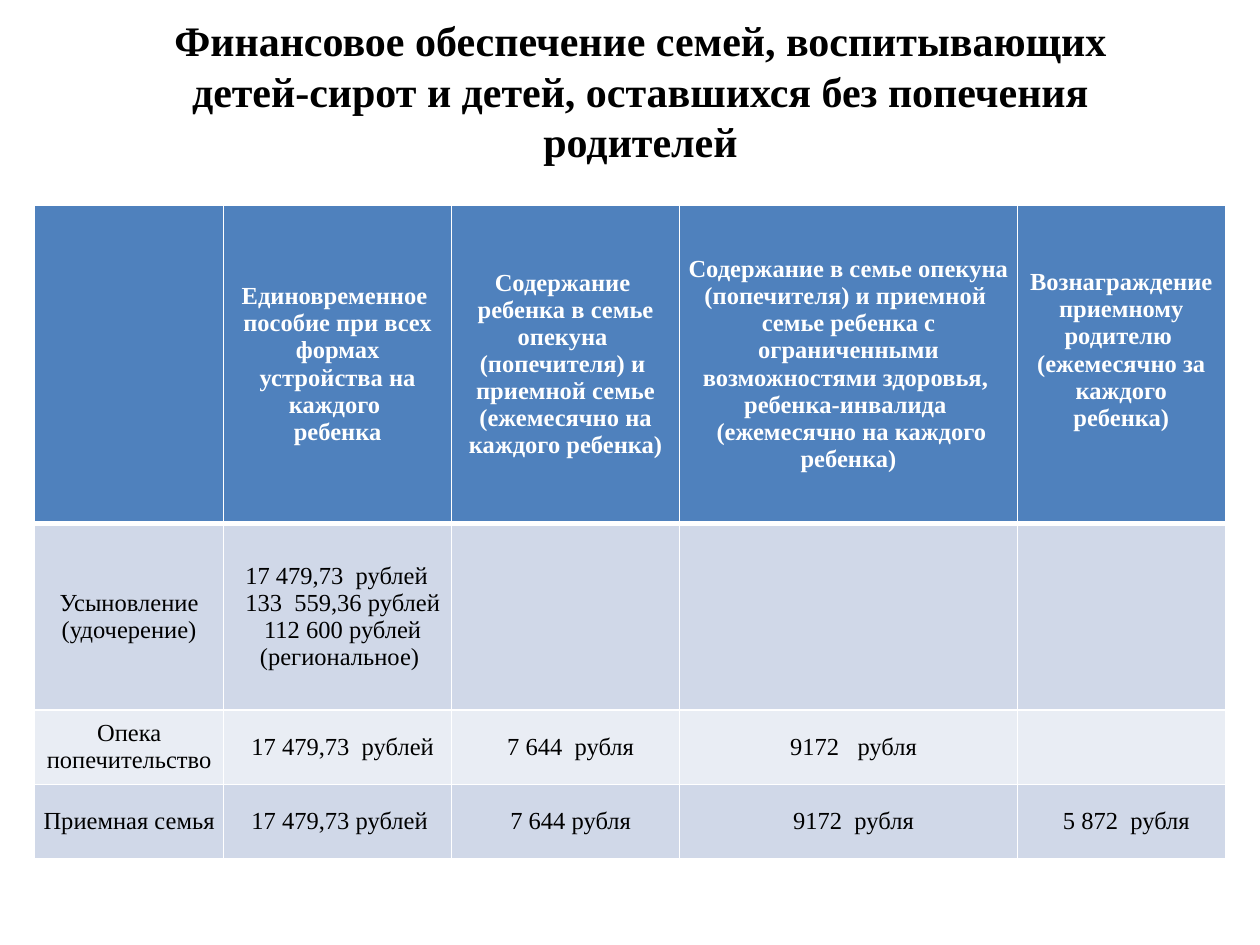
"""Builds a slide with a table of payments to families raising orphaned children."""
from dataclasses import dataclass

from lxml import etree
from pptx import Presentation
from pptx import util as u
from pptx.dml.color import RGBColor
from pptx.enum import text
from pptx.oxml.ns import qn


@dataclass(frozen=True)
class Theme:
    font: str = "Times New Roman"
    title_size: float = 24
    table_size: float = 14
    dark: str = "000000"
    light: str = "FFFFFF"
    header: str = "4F81BD"
    bands: tuple = ("D0D8E8", "E9EDF4")
    thin: float = 1
    thick: float = 3


HEADERS = [
    [],
    ["Единовременное ", "пособие при всех формах устройства на каждого ", "ребенка"],
    ["Содержание ", "ребенка в семье опекуна ", "(попечителя) и ",
     "приемной семье (ежемесячно на каждого ребенка)"],
    ["Содержание в семье опекуна (попечителя) и приемной ",
     "семье ребенка с ограниченными возможностями здоровья, ",
     "ребенка-инвалида ", " (ежемесячно на каждого ребенка)"],
    ["Вознаграждение приемному родителю ", "(ежемесячно за каждого ребенка)"],
]
PAYMENTS = [
    [["Усыновление (удочерение)"],
     ["17 479,73  рублей  ", "133  559,36 рублей", "112 600 рублей (региональное) "],
     [], [], []],
    [["Опека попечительство"], [" 17 479,73  рублей "], ["7 644  рубля"],
     ["9172   рубля"], []],
    [["Приемная семья"], ["17 479,73 рублей "], ["7 644 рубля"],
     ["9172  рубля"], ["5 872  рубля"]],
]
COLUMN_WIDTHS = [108, 130.3, 130.3, 193, 118.8]
ROW_HEIGHTS = [182.2, 106.5, 42.5, 42.5]


def write_text(frame, paragraphs, *, font, size, color, bold=False, indent=0):
    for index, content in enumerate(paragraphs):
        paragraph = frame.paragraphs[0] if index == 0 else frame.add_paragraph()
        paragraph.text = content
        paragraph.alignment = text.PP_ALIGN.CENTER
        if indent:
            properties = paragraph._p.get_or_add_pPr()
            properties.set("marL", str(u.Pt(indent)))
            properties.set("indent", "0")
        for run in paragraph.runs:
            run.font.name = font
            run.font.size = u.Pt(size)
            run.font.bold = bold
            run.font.color.rgb = RGBColor.from_string(color)


class SlideBuilder:
    def __init__(self, slide, theme):
        self.slide = slide
        self.theme = theme

    def title(self, content, left, top, width, height):
        shape = self.slide.shapes.title
        shape.left, shape.top = u.Pt(left), u.Pt(top)
        shape.width, shape.height = u.Pt(width), u.Pt(height)
        shape.text_frame.vertical_anchor = text.MSO_ANCHOR.MIDDLE
        shape.text_frame.auto_size = text.MSO_AUTO_SIZE.NONE
        write_text(shape.text_frame, [content], font=self.theme.font,
                   size=self.theme.title_size, color=self.theme.dark, bold=True)

    def borders(self, cell, widths):
        properties = cell._tc.get_or_add_tcPr()
        for index, (side, width) in enumerate(widths.items()):
            line = etree.Element(qn(f"a:ln{side}"), w=str(u.Pt(width)))
            fill = etree.SubElement(line, qn("a:solidFill"))
            etree.SubElement(fill, qn("a:srgbClr"), val=self.theme.light)
            properties.insert(index, line)

    def cell(self, cell, paragraphs, row, column):
        theme = self.theme
        is_header = row == 0
        cell.vertical_anchor = text.MSO_ANCHOR.MIDDLE
        cell.margin_left = cell.margin_right = u.Pt(5)
        cell.margin_top = cell.margin_bottom = 0
        cell.fill.solid()
        color = theme.header if is_header else theme.bands[(row - 1) % 2]
        cell.fill.fore_color.rgb = RGBColor.from_string(color)
        write_text(cell.text_frame, paragraphs, font=theme.font,
                   size=theme.table_size, bold=is_header,
                   color=theme.light if is_header else theme.dark,
                   indent=0 if is_header or column == 0 else 5.76)
        self.borders(cell, {
            "L": theme.thin, "R": theme.thin,
            "T": theme.thick if row == 1 else theme.thin,
            "B": theme.thick if is_header else theme.thin})

    def table(self, rows, left, top, widths, heights):
        frame = self.slide.shapes.add_table(
            len(rows), len(widths), u.Pt(left), u.Pt(top),
            u.Pt(sum(widths)), u.Pt(sum(heights)))
        table = frame.table
        for column, width in zip(table.columns, widths):
            column.width = u.Pt(width)
        for row, height in zip(table.rows, heights):
            row.height = u.Pt(height)
        for row, contents in enumerate(rows):
            for column, paragraphs in enumerate(contents):
                self.cell(table.cell(row, column), paragraphs, row, column)
        return table


def main():
    presentation = Presentation()
    presentation.slide_width, presentation.slide_height = u.Pt(720), u.Pt(540)
    slide = presentation.slides.add_slide(presentation.slide_layouts[5])
    builder = SlideBuilder(slide, Theme())
    table = builder.table([HEADERS, *PAYMENTS], 19.8, 117, COLUMN_WIDTHS, ROW_HEIGHTS)
    table.cell(0, 4).margin_bottom = u.Pt(16)
    builder.title("Финансовое обеспечение семей, воспитывающих\v"
                  "детей-сирот и детей, оставшихся без попечения родителей",
                  60, 15, 612, 73.5)
    presentation.save("out.pptx")


if __name__ == "__main__":
    main()
